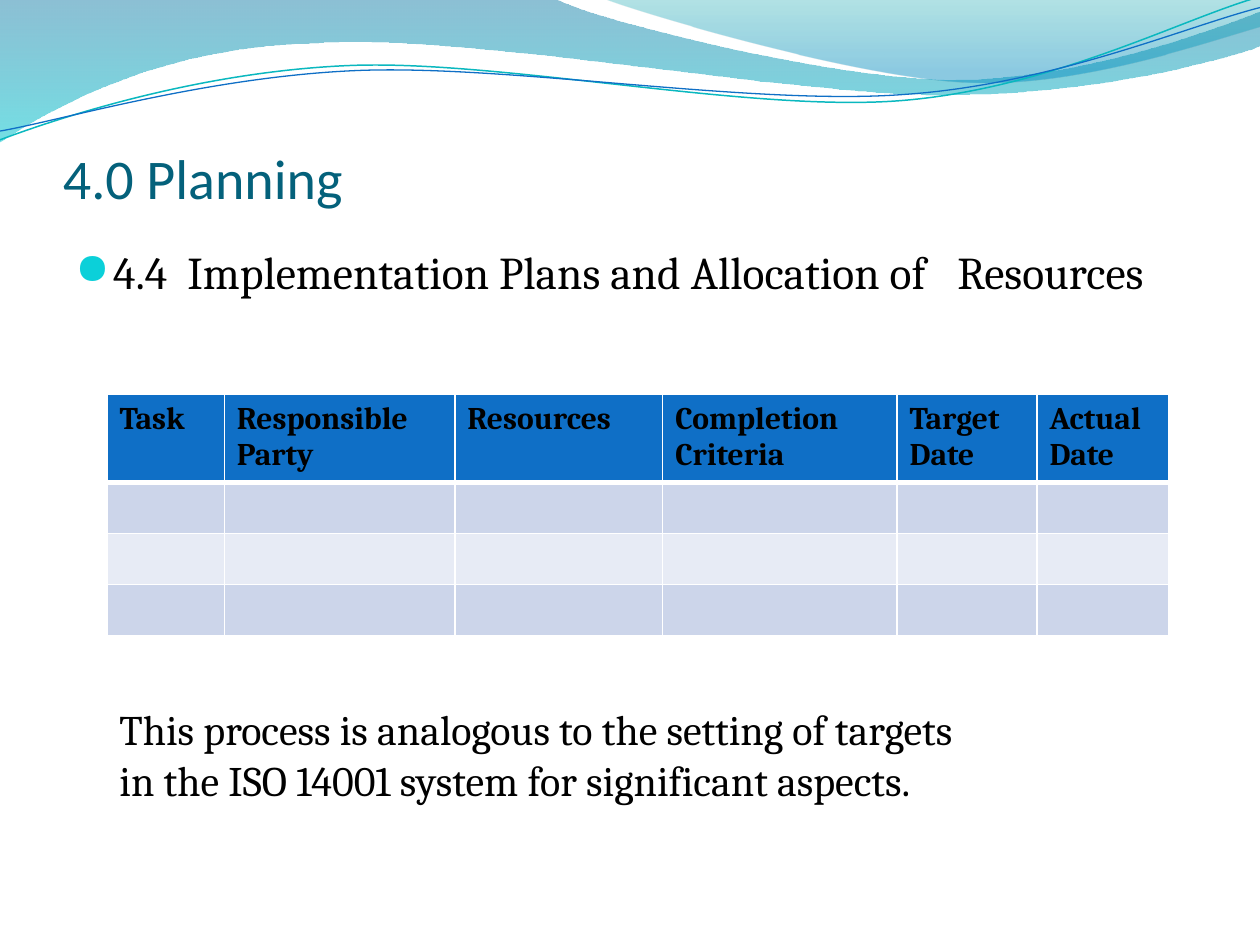
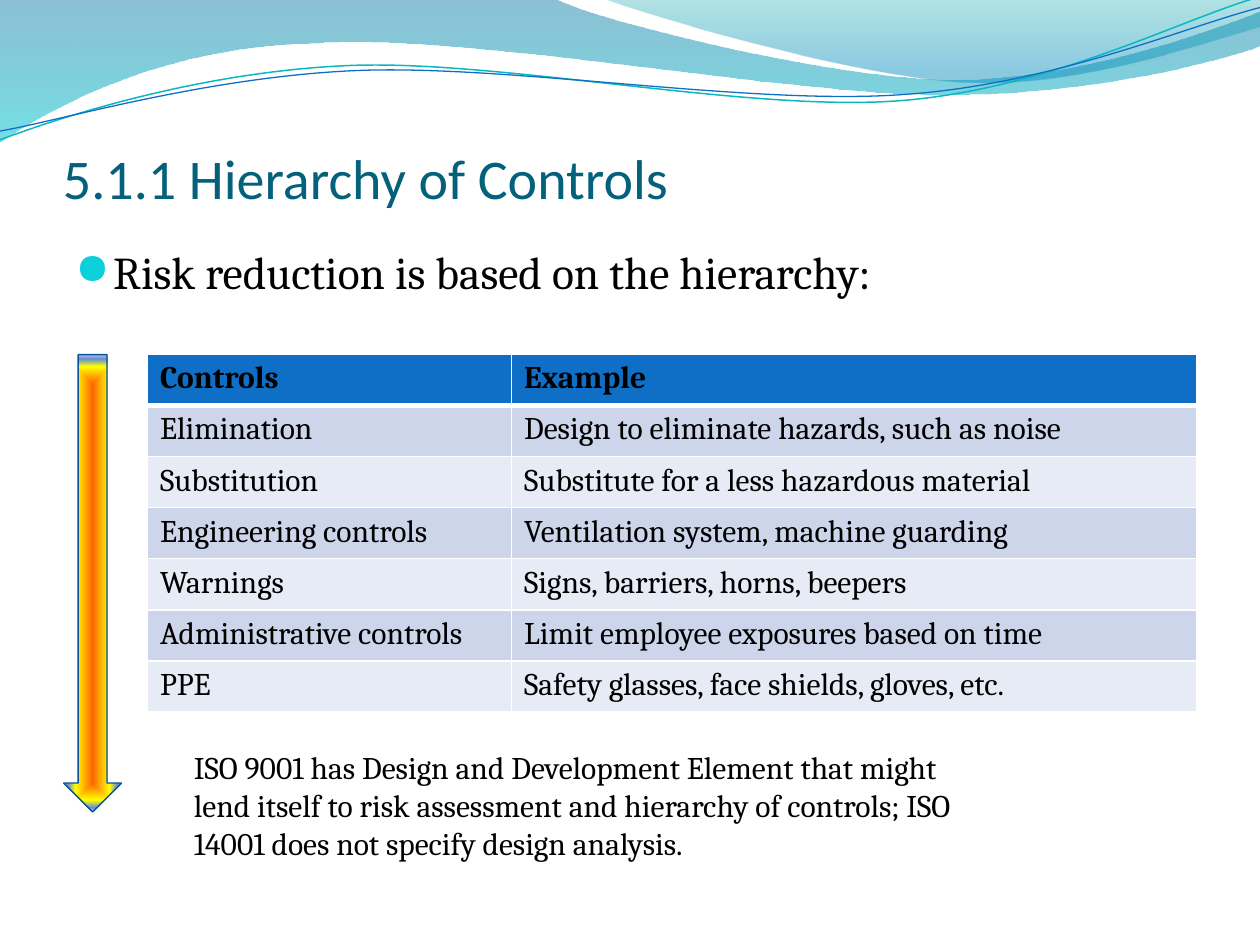
import math

from pptx import Presentation
from pptx import util as u
from pptx.dml.color import RGBColor
from pptx.enum import shapes, text
from pptx.oxml import parse_xml
from pptx.oxml.ns import nsdecls, qn

COLORS = {
    "title": "04617B", "ink": "000000", "bullet": "0BD0D9", "white": "FFFFFF",
    "header": "0F6FC6", "band_dark": "CCD5EA", "band_light": "E7EBF5",
    "wave_teal": "0AB8BF", "wave_blue": "0F6FC6", "arrow_edge": "095295",
}
HEADING, BODY, SYMBOLS = "Calibri", "Cambria", "OpenSymbol"
COLUMNS, ROWS = 100, 75
WAVE_TILT = 2.7

LEFT_SWELL = [
    (0, 0), (44, -0.1), (47.6, 1.7, 66.4, 6.3, 75.8, 6.3),
    (85.3, 6.3, 95.8, 2.6, 100, 0.9), (100.1, 3.6),
    (98.3, 4.4, 87, 7.6, 74.6, 7.5), (62.2, 7.5, 38.2, 2.8, 25.7, 3.4),
    (12.9, 3.6, 4.6, 8.3, -0.1, 11.3), (0, 0),
]
RIGHT_SWELL = [
    (47.9, -0.1), (50.9, 1.1, 68.2, 6.2, 76.9, 6.5),
    (85.6, 6.9, 96.1, 3.2, 100, 2.1), (100, 0), (47.9, -0.1),
]
TEAL_WAVE = [
    (0, 11.1), (4.8, 9.3, 15.8, 5.7, 27.7, 5.2),
    (39.5, 4.7, 59.3, 8.9, 71.3, 8), (83.3, 7.1, 93.8, 1.5, 99.8, -0.2),
]
BLUE_WAVE = [
    (0, 10.4), (4.7, 9.6, 16.4, 6.1, 28.3, 5.6),
    (40.3, 5.1, 59.7, 8.4, 71.7, 7.5), (83.6, 6.7, 94.1, 2.1, 100, 0.6),
]
LEFT_TINTS = [(0, "0074A1", 45), (100, "00C6CF", 55)]
RIGHT_TINTS = [(0, "00A1A9", 30), (80, "008BBF", 45)]
ARROW_TINTS = [(0, "FF6600", 100), (59, "FFFF00", 100),
               (85, "668DD7", 100), (100, "B3C4EF", 100)]
DOWNWARD = '<a:lin ang="5400000" scaled="0"/>'
OUTWARD = ('<a:path path="shape">'
           '<a:fillToRect l="50000" t="50000" r="50000" b="50000"/></a:path>')

TASK_PLAN = [
    ["Task", "Responsible Party", "Resources", "Completion\nCriteria",
     "Target Date", "Actual Date"],
] + [[""] * 6 for _ in range(3)]

CONTROLS = [
    ["Controls", "Example"],
    ["Elimination", "Design to eliminate hazards, such as noise"],
    ["Substitution", "Substitute for a less hazardous material"],
    ["Engineering controls", "Ventilation system, machine guarding"],
    ["Warnings", "Signs, barriers, horns, beepers"],
    ["Administrative controls", "Limit employee exposures based on time"],
    ["PPE", "Safety glasses, face shields, gloves, etc."],
]


def rgb(name):
    return RGBColor.from_string(COLORS[name])


def write(frame, content, size=18, font=BODY, color="ink", bold=False,
          bullet=False, anchor=text.MSO_ANCHOR.TOP, insets=None):
    frame.word_wrap = True
    frame.vertical_anchor = anchor
    if insets:
        (frame.margin_left, frame.margin_top,
         frame.margin_right, frame.margin_bottom) = map(u.Inches, insets)
    for index, line in enumerate(content.split("\n")):
        paragraph = frame.add_paragraph() if index else frame.paragraphs[0]
        paragraph.font.size = u.Pt(size)
        if bullet:
            add_bullet(paragraph, size)
        if line:
            run = paragraph.add_run()
            run.text = line
            run.font.size, run.font.name, run.font.bold = u.Pt(size), font, bold
            run.font.color.rgb = rgb(color)


def add_bullet(paragraph, size):
    paragraph.space_before = u.Pt(size * 0.2)
    properties = paragraph._p.get_or_add_pPr()
    properties.set("marL", str(u.Inches(0.3)))
    properties.set("indent", str(-u.Inches(0.3)))
    marks = (f'<a:buClr {nsdecls("a")}><a:srgbClr val="{COLORS["bullet"]}"/></a:buClr>',
             f'<a:buSzPct {nsdecls("a")} val="95000"/>',
             f'<a:buFont {nsdecls("a")} typeface="{SYMBOLS}"/>',
             f'<a:buChar {nsdecls("a")} char="●"/>')
    for position, mark in enumerate(marks, 1):
        properties.insert(position, parse_xml(mark))


def bend(shape, outline):
    lines = iter(list(shape._element.iter(qn("a:lnTo"))))
    for step in outline[1:]:
        first = next(lines)
        if len(step) == 6:
            curve = parse_xml(f'<a:cubicBezTo {nsdecls("a")}/>')
            first.addprevious(curve)
            for line in (first, next(lines), next(lines)):
                curve.append(line[0])
                line.getparent().remove(line)


def blend(shape, tints, direction):
    shape.fill.gradient()
    stops = "".join(
        f'<a:gs pos="{place * 1000}"><a:srgbClr val="{tint}">'
        f'<a:alpha val="{opacity * 1000}"/></a:srgbClr></a:gs>'
        for place, tint, opacity in tints)
    properties = shape._element.spPr
    properties.replace(properties.find(qn("a:gradFill")), parse_xml(
        f'<a:gradFill {nsdecls("a")} rotWithShape="1">'
        f'<a:gsLst>{stops}</a:gsLst>{direction}</a:gradFill>'))


def rule_cell(cell, top, bottom):
    properties = cell._tc.get_or_add_tcPr()
    for side, width in (("L", 1), ("R", 1), ("T", top), ("B", bottom)):
        properties.append(parse_xml(
            f'<a:ln{side} {nsdecls("a")} w="{u.Pt(width)}"><a:solidFill>'
            f'<a:srgbClr val="{COLORS["white"]}"/></a:solidFill></a:ln{side}>'))


class Deck:
    def __init__(self):
        self.show = Presentation()
        self.show.slide_width, self.show.slide_height = u.Inches(10), u.Inches(7.5)
        self.column = self.show.slide_width / COLUMNS
        self.row = self.show.slide_height / ROWS

    def box(self, left, top, width, height):
        return (round(left * self.column), round(top * self.row),
                round(width * self.column), round(height * self.row))

    def start(self, heading, point, point_rows):
        self.slide = self.show.slides.add_slide(self.show.slide_layouts[6])
        self.swell(LEFT_SWELL, LEFT_TINTS)
        self.swell(RIGHT_SWELL, RIGHT_TINTS)
        self.wave(TEAL_WAVE, (49.9, 5.75), "wave_teal", 0.85)
        self.wave(BLUE_WAVE, (49.95, 5.9), "wave_blue", 0.75)
        self.words((5, 9.8, 90, 6.9), heading, size=32, font=HEADING, color="title",
                   anchor=text.MSO_ANCHOR.BOTTOM, insets=(0, 0.05, 0, 0))
        self.words((5, 18.9, 90, point_rows), point, size=26, bullet=True)

    def freeform(self, outline, close, pivot=(0, 0), tilt=0):
        cos, sin = math.cos(math.radians(tilt)), math.sin(math.radians(tilt))
        points = []
        for step in outline:
            for x, y in zip(step[::2], step[1::2]):
                dx, dy = x - pivot[0], y - pivot[1]
                points.append(((pivot[0] + dx * cos - dy * sin) * self.column,
                               (pivot[1] + dx * sin + dy * cos) * self.row))
        builder = self.slide.shapes.build_freeform(*points[0], scale=1.0)
        builder.add_line_segments(points[1:], close=close)
        shape = builder.convert_to_shape()
        bend(shape, outline)
        shape.rotation = -tilt
        shape.shadow.inherit = False
        return shape

    def swell(self, outline, tints):
        shape = self.freeform(outline, True)
        blend(shape, tints, DOWNWARD)
        shape.line.fill.background()

    def wave(self, outline, pivot, color, width):
        shape = self.freeform(outline, False, pivot, WAVE_TILT)
        shape.fill.background()
        shape.line.color.rgb, shape.line.width = rgb(color), u.Pt(width)

    def words(self, place, content, **style):
        write(self.slide.shapes.add_textbox(*self.box(*place)).text_frame,
              content, **style)

    def table(self, left, top, widths, header_rows, record_rows, records):
        heights = [header_rows] + [record_rows] * (len(records) - 1)
        place = self.box(left, top, sum(widths), sum(heights))
        grid = self.slide.shapes.add_table(len(records), len(widths), *place).table
        for column, width in zip(grid.columns, widths):
            column.width = round(width * self.column)
        for r, (record, height) in enumerate(zip(records, heights)):
            grid.rows[r].height = round(height * self.row)
            band = "header" if r == 0 else "band_dark" if r % 2 else "band_light"
            for c, content in enumerate(record):
                cell = grid.cell(r, c)
                write(cell.text_frame, content, bold=r == 0)
                rule_cell(cell, 3 if r == 1 else 1, 3 if r == 0 else 1)
                cell.fill.solid()
                cell.fill.fore_color.rgb = rgb(band)

    def priority_arrow(self, left, top, width, height):
        arrow = self.slide.shapes.add_shape(
            shapes.MSO_SHAPE.RIGHT_ARROW, *self.box(left, top, width, height))
        arrow.rotation = 90
        blend(arrow, ARROW_TINTS, OUTWARD)
        arrow.line.color.rgb, arrow.line.width = rgb("arrow_edge"), u.Pt(0.75)
        arrow.shadow.inherit = False


def main():
    deck = Deck()

    deck.start("4.0 Planning",
               "4.4  Implementation Plans and Allocation of\tResources", 10.1)
    deck.table(8.5, 31.3, [9.3, 18.3, 16.5, 18.6, 11.1, 10.5], 6.9, 4.05, TASK_PLAN)
    deck.words((8.5, 55.35, 69.3, 13.1),
               "This process is analogous to the setting of targets in the "
               "ISO 14001 system for significant aspects.", size=24)

    deck.start("5.1.1 Hierarchy of Controls",
               "Risk reduction is based on the hierarchy:", 6.6)
    deck.table(11.7, 28.1, [28.9, 54.4], 4.06, 4.06, CONTROLS)
    deck.priority_arrow(-10.8, 44, 36.3, 4.6)
    deck.words((14.4, 58.9, 62.8, 10.1),
               "ISO 9001 has Design and Development Element that might lend itself "
               "to risk assessment and hierarchy of controls; ISO 14001 does not "
               "specify design analysis.")

    deck.show.save("out.pptx")


if __name__ == "__main__":
    main()
